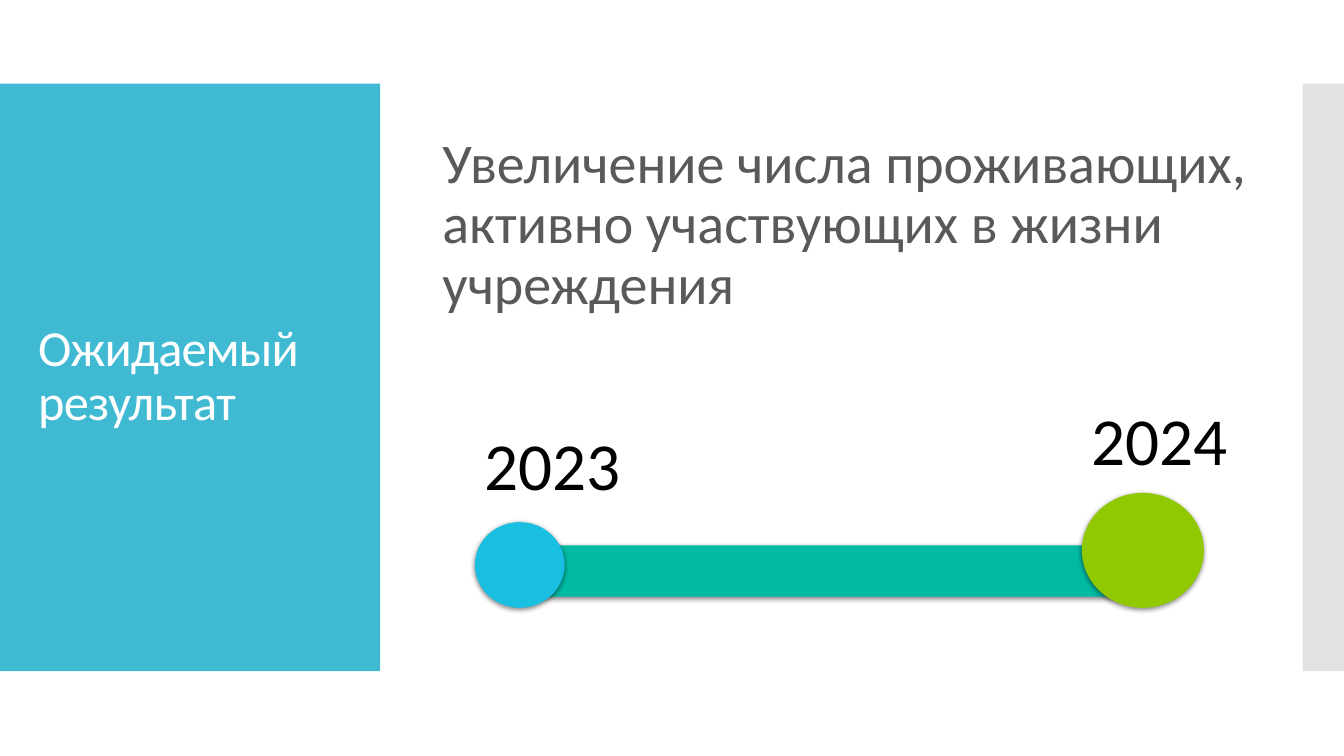
from dataclasses import dataclass
from lxml.etree import SubElement as Sub
from pptx import Presentation
from pptx.dml.color import RGBColor as Rgb
from pptx.enum.shapes import MSO_SHAPE as Kind
from pptx.enum.text import MSO_ANCHOR as Anchor
from pptx.oxml.ns import qn
from pptx.util import Pt

PX = 9144


@dataclass(frozen=True)
class Theme:
    font: str = "Calibri"
    panel: str = "40BAD2"
    edge: str = "C8C8C8"
    bar: str = "00BAA2"
    start: str = "19BFE0"
    end: str = "90C900"
    light: str = "FFFFFF"
    body: str = "595959"
    dark: str = "000000"
    title_size: int = 36
    body_size: int = 40
    year_size: int = 48


THEME = Theme()


def scale(box):
    return [n * PX for n in box]


def apply(item, form):
    for name, value in form.items():
        setattr(item, name, value)


def draw(slide, kind, box, color):
    shape = slide.shapes.add_shape(kind, *scale(box))
    shape.shadow.inherit = False
    shape.fill.solid()
    shape.fill.fore_color.rgb = Rgb.from_string(color)
    shape.line.fill.background()
    return shape


def fade(color, share):
    Sub(color, qn("a:alpha"), val=str(share * 1000))


def shade(shape):
    effects = shape._element.spPr.find(qn("a:effectLst"))
    outer = Sub(effects, qn("a:outerShdw"), blurRad=str(Pt(3.5)),
                dist=str(Pt(1.1)), dir="5400000", algn="ctr", rotWithShape="0")
    fade(Sub(outer, qn("a:srgbClr"), val=THEME.dark), 45)


def write(slide, box, text, size, color, anchor=Anchor.TOP, para=None):
    frame = slide.shapes.add_textbox(*scale(box)).text_frame
    apply(frame, {"word_wrap": True, "vertical_anchor": anchor})
    line = frame.paragraphs[0]
    apply(line, para or {})
    run = line.add_run()
    run.text = text
    apply(run.font, {"name": THEME.font, "size": Pt(size)})
    run.font.color.rgb = Rgb.from_string(color)
    return run


def side(slide, box):
    x, y, w, h = box
    draw(slide, Kind.RECTANGLE, box, THEME.panel)
    run = write(slide, (x + 28, y + 40, w - 55, h - 80), "Ожидаемый результат",
                THEME.title_size, THEME.light, Anchor.MIDDLE, {"line_spacing": 0.9})
    run.font._element.set("spc", "-60")


def edge(slide, box):
    strip = draw(slide, Kind.RECTANGLE, box, THEME.edge)
    fade(strip._element.spPr.find(qn("a:solidFill"))[0], 50)


def lead(slide, box):
    write(slide, box,
          "Увеличение числа проживающих, активно участвующих в жизни учреждения",
          THEME.body_size, THEME.body, Anchor.MIDDLE,
          {"line_spacing": 0.9, "space_before": Pt(12)})


def growth(slide, box):
    x, y, w, h = box
    base = y + h
    shade(draw(slide, Kind.ROUNDED_RECTANGLE, (x + 53, base - 62, 610, 51), THEME.bar))
    points = (("2023", x, 89, 85, 103, 210, THEME.start),
              ("2024", x + w - 121, 121, 114, 99, 200, THEME.end))
    for year, left, wide, high, rise, span, color in points:
        top = base - high
        shade(draw(slide, Kind.OVAL, (left, top, wide, high), color))
        write(slide, (left, top - rise, span, 91), year, THEME.year_size, THEME.dark)


def main():
    deck = Presentation()
    apply(deck, {"slide_width": 1333 * PX, "slide_height": 750 * PX})
    slide = deck.slides.add_slide(deck.slide_layouts[6])
    side(slide, (0, 83, 377, 583))
    edge(slide, (1292, 83, 41, 583))
    lead(slide, (429, 94, 864, 260))
    growth(slide, (471, 390, 723, 213))
    deck.save("out.pptx")


if __name__ == "__main__":
    main()
